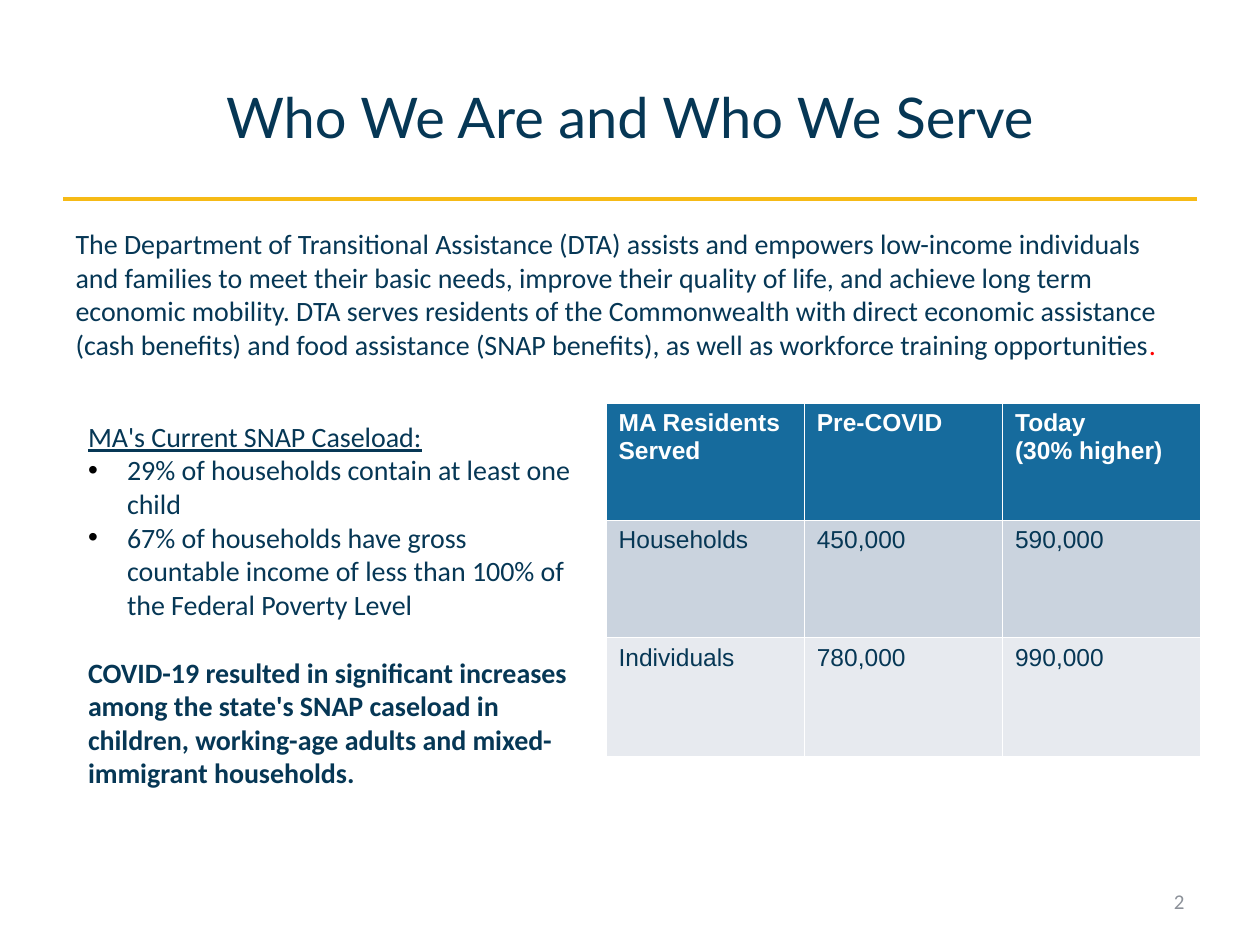
from lxml.etree import SubElement as Sub
from pptx import Presentation
from pptx.dml.color import RGBColor as RGB
from pptx.enum.shapes import MSO_CONNECTOR as Link
from pptx.enum.text import MSO_ANCHOR as Anchor, PP_ALIGN as Align
from pptx.oxml.ns import qn
from pptx.util import Inches, Pt

NAVY = RGB(0x06, 0x37, 0x55)
GOLD = RGB(0xF6, 0xBA, 0x16)
RED = RGB(0xFF, 0x00, 0x00)
GRAY = RGB(0x8C, 0x91, 0x99)
WHITE = RGB(0xFF, 0xFF, 0xFF)
BLUE = RGB(0x16, 0x6B, 0x9D)
MIST = RGB(0xCA, 0xD3, 0xDE)
PALE = RGB(0xE7, 0xEA, 0xEF)

INTRO = (
    "The Department of Transitional Assistance (DTA) assists and empowers "
    "low-income individuals and families to meet their basic needs, improve "
    "their quality of life, and achieve long term economic mobility. DTA serves "
    "residents of the Commonwealth with direct economic assistance (cash "
    "benefits) and food assistance (SNAP benefits), as well as workforce "
    "training opportunities"
)
FACTS = [
    "29% of households contain at least one child",
    "67% of households have gross countable income of less than 100% of the "
    "Federal Poverty Level",
]
IMPACT = (
    "COVID-19 resulted in significant increases among the state's SNAP caseload "
    "in children, working-age adults and mixed-immigrant households."
)
ROWS = [
    ("MA Residents Served", "Pre-COVID", "Today\n(30% higher)"),
    ("Households", "450,000", "590,000"),
    ("Individuals", "780,000", "990,000"),
]
FILLS = [BLUE, MIST, PALE]
HEIGHTS = [0.93, 0.93, 0.95]


def style(para, size=16, color=NAVY, face="Calibri", bold=None):
    """Set the font of a paragraph."""
    font = para.font
    font.size, font.name, font.bold = Pt(size), face, bold
    font.color.rgb = color


def place(shape, left, top, width, height):
    """Move and size a shape, in inches."""
    shape.left, shape.top = Inches(left), Inches(top)
    shape.width, shape.height = Inches(width), Inches(height)


def add_box(slide, left, top, width, height):
    """Add a wrapping text box and return its frame."""
    box = slide.shapes.add_textbox(
        Inches(left), Inches(top), Inches(width), Inches(height))
    box.text_frame.word_wrap = True
    return box.text_frame


def add_bullet(para):
    """Give a paragraph a black hanging bullet."""
    props = para._p.get_or_add_pPr()
    props.set("marL", str(Inches(0.31)))
    props.set("indent", str(-Inches(0.31)))
    Sub(Sub(props, qn("a:buClr")), qn("a:srgbClr"), val="000000")
    Sub(props, qn("a:buFont"), typeface="Arial")
    Sub(props, qn("a:buChar"), char="•")


def add_rule(slide):
    """Draw the gold line below the title."""
    rule = slide.shapes.add_connector(
        Link.STRAIGHT, Inches(0.5), Inches(1.58), Inches(9.5), Inches(1.58))
    rule.line.color.rgb, rule.line.width = GOLD, Pt(2.25)
    Sub(rule._element.spPr, qn("a:effectLst"))


def fill_title(slide):
    """Fill the title placeholder."""
    title = slide.shapes.title
    place(title, 0.5, 0.3, 9, 1.25)
    title.text_frame.text = "Who We Are and Who We Serve"
    title.text_frame.vertical_anchor = Anchor.MIDDLE
    para = title.text_frame.paragraphs[0]
    para.alignment = Align.CENTER
    style(para, 32, face="Lato")


def fill_intro(slide):
    """Fill the body placeholder with unbulleted text."""
    body = slide.placeholders[1]
    place(body, 0.5, 1.75, 9, 1.45)
    para = body.text_frame.paragraphs[0]
    props = para._p.get_or_add_pPr()
    props.set("marL", "0")
    props.set("indent", "0")
    Sub(props, qn("a:buNone"))
    para.space_before = Pt(0)
    style(para)
    para.add_run().text = INTRO
    stop = para.add_run()
    stop.text = "."
    stop.font.color.rgb = RED


def add_facts(slide):
    """Add the caseload heading, bullets and closing statement."""
    frame = add_box(slide, 0.6, 3.28, 4.09, 3.06)
    head = frame.paragraphs[0]
    head.text = "MA's Current SNAP Caseload:"
    style(head)
    head.font.underline = True
    for fact in FACTS:
        para = frame.add_paragraph()
        para.text = fact
        add_bullet(para)
        style(para)
    last = frame.add_paragraph()
    last.text = IMPACT
    last.space_before = Pt(19.5)
    style(last, bold=True)


def add_grid(slide):
    """Add the table of residents served."""
    grid = slide.shapes.add_table(
        len(ROWS), 3, Inches(4.81), Inches(3.2), Inches(4.72),
        Inches(sum(HEIGHTS))).table
    for i, (row, fill) in enumerate(zip(ROWS, FILLS)):
        grid.rows[i].height = Inches(HEIGHTS[i])
        for cell, text in zip(grid.rows[i].cells, row):
            cell.text = text
            cell.fill.solid()
            cell.fill.fore_color.rgb = fill
            for para in cell.text_frame.paragraphs:
                style(para, 14, NAVY if i else WHITE, "Arial", i == 0)


def add_number(slide):
    """Add the slide number."""
    frame = add_box(slide, 7.17, 6.95, 2.33, 0.4)
    frame.vertical_anchor = Anchor.MIDDLE
    para = frame.paragraphs[0]
    para.text = "2"
    para.alignment = Align.RIGHT
    style(para, 12, GRAY)


def main():
    """Build and save the slide."""
    deck = Presentation()
    deck.slide_width, deck.slide_height = Inches(10), Inches(7.5)
    slide = deck.slides.add_slide(deck.slide_layouts[1])
    add_rule(slide)
    fill_title(slide)
    fill_intro(slide)
    add_number(slide)
    add_grid(slide)
    add_facts(slide)
    deck.save("out.pptx")


if __name__ == "__main__":
    main()
